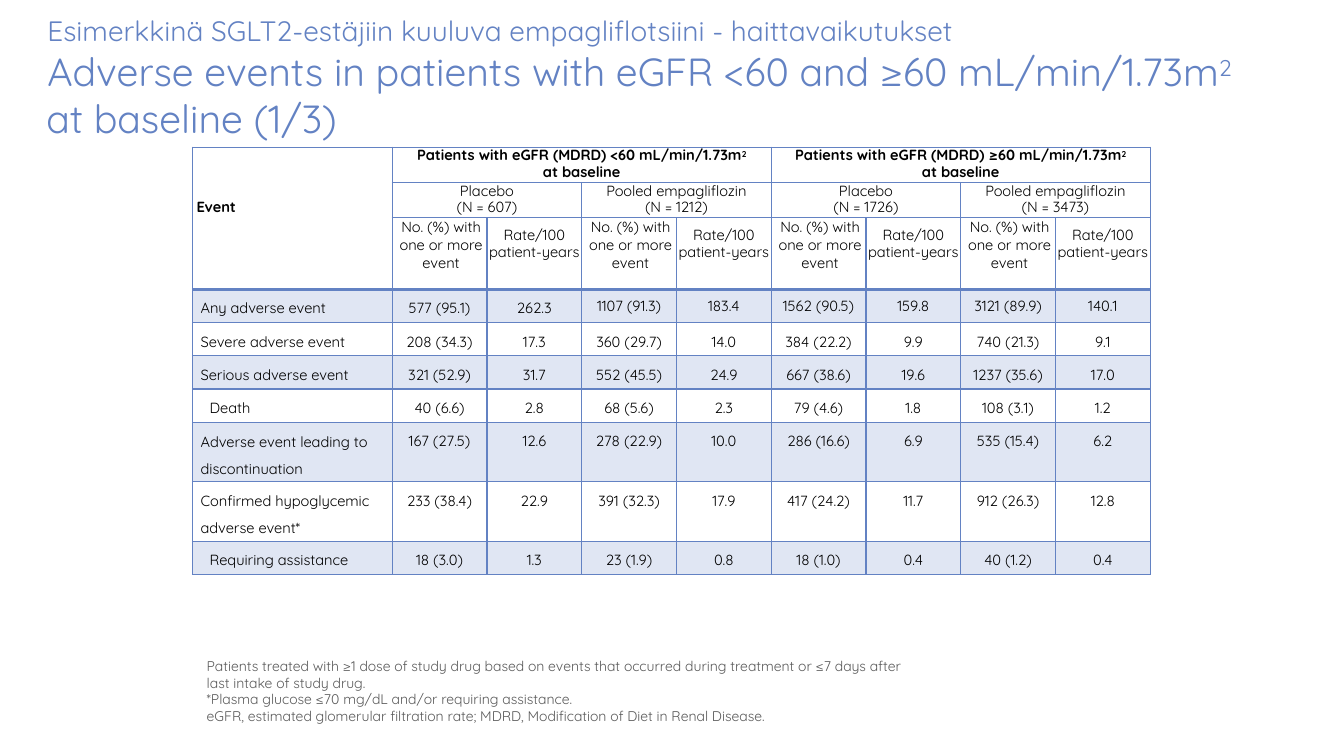
from lxml.etree import SubElement
from pptx import Presentation
from pptx.dml.color import RGBColor
from pptx.enum.text import MSO_ANCHOR, PP_ALIGN
from pptx.oxml.ns import qn
from pptx.util import Inches, Pt

THEME = {
    "font": "Quicksand",
    "blue": "6382C3",
    "band": "E0E6F3",
    "white": "FFFFFF",
    "black": "000000",
    "grey": "5A5A5A",
    "subtitle_size": 20,
    "title_size": 28,
    "table_size": 10.5,
    "note_size": 10,
    "rule": 1,
    "header_rule": 2.25,
}


def write(frame, lines, sizes, color, bold=False, align=PP_ALIGN.LEFT, spacing=None):
    for index, line in enumerate(lines):
        paragraph = frame.paragraphs[0] if index == 0 else frame.add_paragraph()
        paragraph.alignment = align
        if spacing:
            paragraph.line_spacing = spacing[index]
        for part_index, part in enumerate(line.split("^")):
            run = paragraph.add_run()
            run.text = part
            formats = {"name": THEME["font"], "size": Pt(sizes[index]), "bold": bold}
            for name, value in formats.items():
                setattr(run.font, name, value)
            run.font.color.rgb = RGBColor.from_string(color)
            if part_index == 1:
                run._r.get_or_add_rPr().set("baseline", "25000")


def fill_cell(cell, lines, left=0, top=0, **formats):
    margins = {"margin_left": left, "margin_top": top, "margin_right": 0, "margin_bottom": 0}
    for name, value in margins.items():
        setattr(cell, name, Inches(value))
    cell.vertical_anchor = MSO_ANCHOR.TOP
    write(cell.text_frame, lines, [THEME["table_size"]] * len(lines), THEME["black"], **formats)


presentation = Presentation()
presentation.slide_width = Inches(13.33)
presentation.slide_height = Inches(7.5)
slide = presentation.slides.add_slide(presentation.slide_layouts[6])

text_boxes = [
    ((0.44, 0.13, 12.34, 0.83), 0.03,
     ["Esimerkkinä SGLT2-estäjiin kuuluva empagliflotsiini - haittavaikutukset",
      "Adverse events in patients with eGFR <60 and ≥60 mL/min/1.73m^2"],
     [THEME["subtitle_size"], THEME["title_size"]], THEME["blue"], [Pt(23.9), Pt(33.5)]),
    ((0.45, 0.93, 3.11, 0.49), 0.01, ["at baseline (1/3)"],
     [THEME["title_size"]], THEME["blue"], None),
    ((2.04, 6.51, 7.28, 0.69), 0.01,
     ["Patients treated with ≥1 dose of study drug based on events that occurred during treatment or ≤7 days after",
      "last intake of study drug.",
      "*Plasma glucose ≤70 mg/dL and/or requiring assistance.",
      "eGFR, estimated glomerular filtration rate; MDRD, Modification of Diet in Renal Disease."],
     [THEME["note_size"]] * 4, THEME["grey"], None),
]
for bounds, left, lines, sizes, color, spacing in text_boxes:
    frame = slide.shapes.add_textbox(*map(Inches, bounds)).text_frame
    frame_formats = {
        "word_wrap": True,
        "margin_left": Inches(left),
        "margin_top": Inches(0.01),
        "margin_right": 0,
        "margin_bottom": 0,
    }
    for name, value in frame_formats.items():
        setattr(frame, name, value)
    write(frame, lines, sizes, color, spacing=spacing)

events = [
    ("Any adverse event", "577 (95.1)", "262.3", "1107 (91.3)", "183.4",
     "1562 (90.5)", "159.8", "3121 (89.9)", "140.1"),
    ("Severe adverse event", "208 (34.3)", "17.3", "360 (29.7)", "14.0",
     "384 (22.2)", "9.9", "740 (21.3)", "9.1"),
    ("Serious adverse event", "321 (52.9)", "31.7", "552 (45.5)", "24.9",
     "667 (38.6)", "19.6", "1237 (35.6)", "17.0"),
    ("Death", "40 (6.6)", "2.8", "68 (5.6)", "2.3", "79 (4.6)", "1.8", "108 (3.1)", "1.2"),
    ("Adverse event leading to discontinuation", "167 (27.5)", "12.6", "278 (22.9)", "10.0",
     "286 (16.6)", "6.9", "535 (15.4)", "6.2"),
    ("Confirmed hypoglycemic adverse event*", "233 (38.4)", "22.9", "391 (32.3)", "17.9",
     "417 (24.2)", "11.7", "912 (26.3)", "12.8"),
    ("Requiring assistance", "18 (3.0)", "1.3", "23 (1.9)", "0.8", "18 (1.0)", "0.4", "40 (1.2)", "0.4"),
]
indented_events = ("Death", "Requiring assistance")
column_widths = [1.98] + [0.94] * 8
row_heights = [0.35, 0.35, 0.71] + [0.33] * 4 + [0.59] * 2 + [0.33]
header_rows = 3
table = slide.shapes.add_table(
    len(row_heights), len(column_widths), Inches(1.91), Inches(1.46),
    Inches(sum(column_widths)), Inches(sum(row_heights))).table
table.first_row = False
table.horz_banding = False
for column, width in zip(table.columns, column_widths):
    column.width = Inches(width)
for row, height in zip(table.rows, row_heights):
    row.height = Inches(height)

for row in range(len(row_heights)):
    banded = row >= header_rows and (row - header_rows) % 2 == 0
    for column in range(len(column_widths)):
        cell = table.cell(row, column)
        above_header_rule = row == header_rows - 1 or (row == 0 and column == 0)
        borders = {
            "lnL": "rule",
            "lnR": "rule",
            "lnT": "header_rule" if row == header_rows else "rule",
            "lnB": "header_rule" if above_header_rule else "rule",
        }
        properties = cell._tc.get_or_add_tcPr()
        for side, rule in borders.items():
            line = SubElement(properties, qn(f"a:{side}"), w=str(int(Pt(THEME[rule]))))
            line_fill = SubElement(line, qn("a:solidFill"))
            SubElement(line_fill, qn("a:srgbClr"), val=THEME["blue"])
        cell.fill.solid()
        cell.fill.fore_color.rgb = RGBColor.from_string(THEME["band" if banded else "white"])

event_header = table.cell(0, 0)
event_header.merge(table.cell(header_rows - 1, 0))
fill_cell(event_header, ["Event"], left=0.04, top=0.5, bold=True)

centered = {"align": PP_ALIGN.CENTER}
two_lines = [Pt(12.4), Pt(11.8)]
for index, sign in enumerate("<≥"):
    column = 1 + 4 * index
    group = table.cell(0, column)
    group.merge(table.cell(0, column + 3))
    fill_cell(group, [f"Patients with eGFR (MDRD) {sign}60 mL/min/1.73m^2", "at baseline"],
              bold=True, spacing=two_lines, **centered)

arms = [("Placebo", 607), ("Pooled empagliflozin", 1212), ("Placebo", 1726), ("Pooled empagliflozin", 3473)]
for index, (arm, patients) in enumerate(arms):
    column = 1 + 2 * index
    arm_header = table.cell(1, column)
    arm_header.merge(table.cell(1, column + 1))
    fill_cell(arm_header, [arm, f"(N = {patients})"], spacing=two_lines, **centered)
    fill_cell(table.cell(2, column), ["No. (%) with one or more event"], left=0.03, **centered)
    fill_cell(table.cell(2, column + 1), ["Rate/100", "patient-years"],
              top=0.09, spacing=[Pt(12.4)] * 2, **centered)

for row, (event, *values) in enumerate(events, start=header_rows):
    wrapped = row_heights[row] > 0.5
    fill_cell(table.cell(row, 0), [event], left=0.17 if event in indented_events else 0.08,
              top=0.01 if wrapped else 0.1, spacing=[1.5] if wrapped else None)
    for column, value in enumerate(values, start=1):
        raised = row == header_rows and column > 2
        fill_cell(table.cell(row, column), [value], top=0.08 if raised else 0.1, **centered)

presentation.save("out.pptx")
